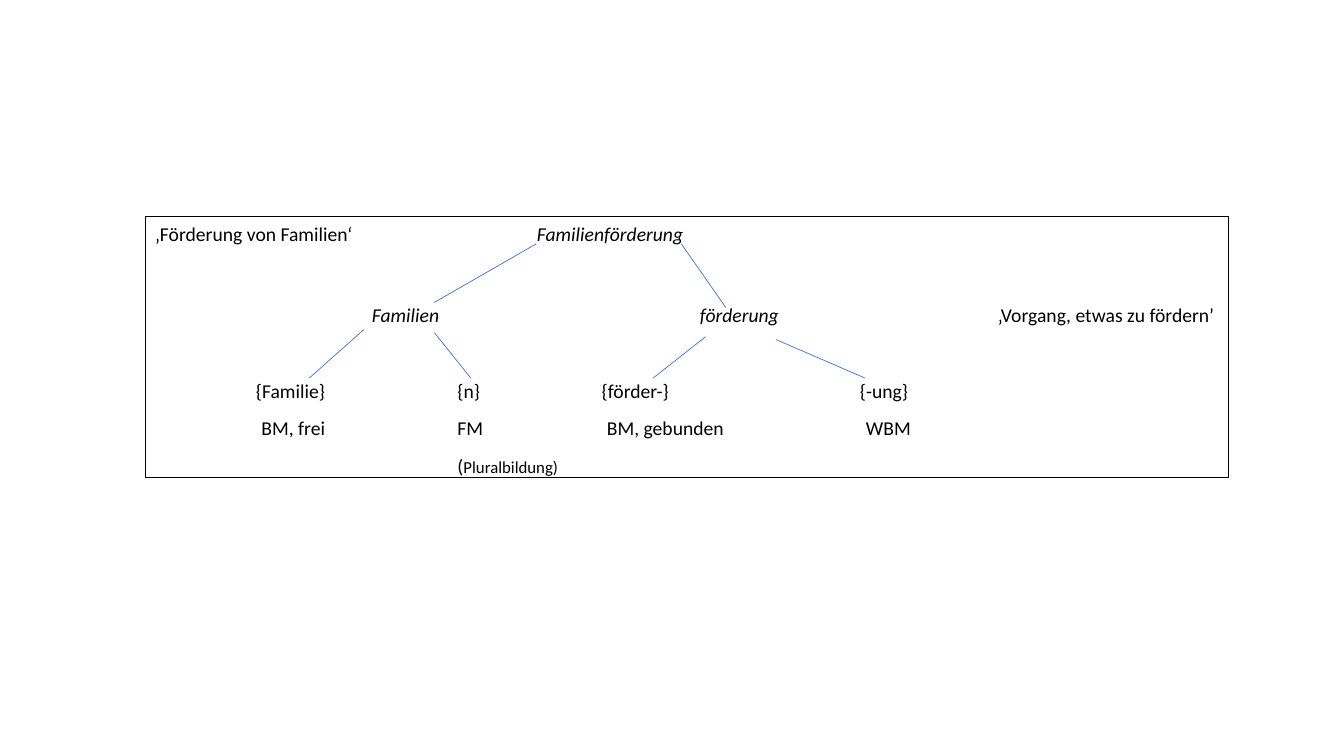
import pptx
import pptx.util
import pptx.dml.color
import pptx.enum.shapes
import pptx.enum.text
from lxml import etree
from pptx.oxml.ns import qn

Pt = pptx.util.Pt
RGBColor = pptx.dml.color.RGBColor

BLACK = RGBColor(0x00, 0x00, 0x00)
WHITE = RGBColor(0xFF, 0xFF, 0xFF)
BLUE = RGBColor(0x44, 0x72, 0xC4)
FONT = "Calibri"
FRAME = (103.7, 154.8, 774, 186.5)

# Each row: space before, then cells of (tab position, [(text, size, italic), ...])
ROWS = [
    (0, [(0, [("‚Förderung von Familien‘", 14, False)]),
         (272.7, [("Familienförderung", 14, True)])]),
    (31.5, [(154.8, [("Familien", 14, True)]),
            (389.1, [("förderung", 14, True)]),
            (602, [("‚Vorgang, etwas zu fördern’", 14, False)])]),
    (27, [(72, [("{Familie}", 14, False)]),
          (216, [("{n}", 14, False)]),
          (319, [("{förder-}", 14, False)]),
          (503.4, [("{-ung}", 14, False)])]),
    (0, [(76, [("BM, frei", 14, False)]),
         (216, [("FM", 14, False)]),
         (322.7, [("BM, gebunden", 14, False)]),
         (507.7, [("WBM", 14, False)])]),
    (0, [(216, [("(", 14, False), ("Pluralbildung)", 12, False)])]),
]

# Branches of the tree: x and y of the start, x and y of the end
BRANCHES = [
    (310.3, 216, 383, 174.2),
    (486.7, 174.2, 518.4, 219.6),
    (259.9, 235.4, 221, 270),
    (310.3, 237.6, 336.2, 270),
    (504, 240.5, 466.6, 270),
    (554.4, 242.6, 617.8, 270),
]


def add_run(p, text, size, italic):
    r = p.add_run()
    r.text = text
    r.font.name = FONT
    r.font.size = Pt(size)
    r.font.italic = italic
    r.font.color.rgb = BLACK


def set_tabs(p, positions):
    tabs = etree.SubElement(p._p.get_or_add_pPr(), qn("a:tabLst"))
    for pos in positions:
        etree.SubElement(tabs, qn("a:tab"), pos=str(int(Pt(pos))), algn="l")


def add_frame(s):
    sp = s.shapes.add_shape(pptx.enum.shapes.MSO_SHAPE.RECTANGLE, *map(Pt, FRAME))
    sp.shadow.inherit = False
    sp.fill.solid()
    sp.fill.fore_color.rgb = WHITE
    sp.line.color.rgb = BLACK
    sp.line.width = Pt(0.75)
    tf = sp.text_frame
    tf.word_wrap = True
    tf.vertical_anchor = pptx.enum.text.MSO_ANCHOR.TOP
    tf.margin_left = Pt(7.2)
    tf.margin_right = Pt(0)
    tf.margin_top = tf.margin_bottom = Pt(3.6)
    for i, (before, cells) in enumerate(ROWS):
        p = tf.add_paragraph() if i else tf.paragraphs[0]
        p.alignment = pptx.enum.text.PP_ALIGN.LEFT
        p.space_before = Pt(before)
        p.space_after = Pt(10)
        set_tabs(p, [pos for pos, _ in cells if pos])
        for pos, runs in cells:
            if pos:
                add_run(p, "\t", 14, False)
            for run in runs:
                add_run(p, *run)


def add_branch(s, ends):
    line = s.shapes.add_connector(
        pptx.enum.shapes.MSO_CONNECTOR.STRAIGHT, *map(Pt, ends))
    line.line.color.rgb = BLUE
    line.line.width = Pt(0.5)
    etree.SubElement(line._element.spPr, qn("a:effectLst"))


def main():
    prs = pptx.Presentation()
    prs.slide_width, prs.slide_height = Pt(960), Pt(540)
    s = prs.slides.add_slide(prs.slide_layouts[6])
    add_frame(s)
    for ends in BRANCHES:
        add_branch(s, ends)
    prs.save("out.pptx")


if __name__ == "__main__":
    main()
